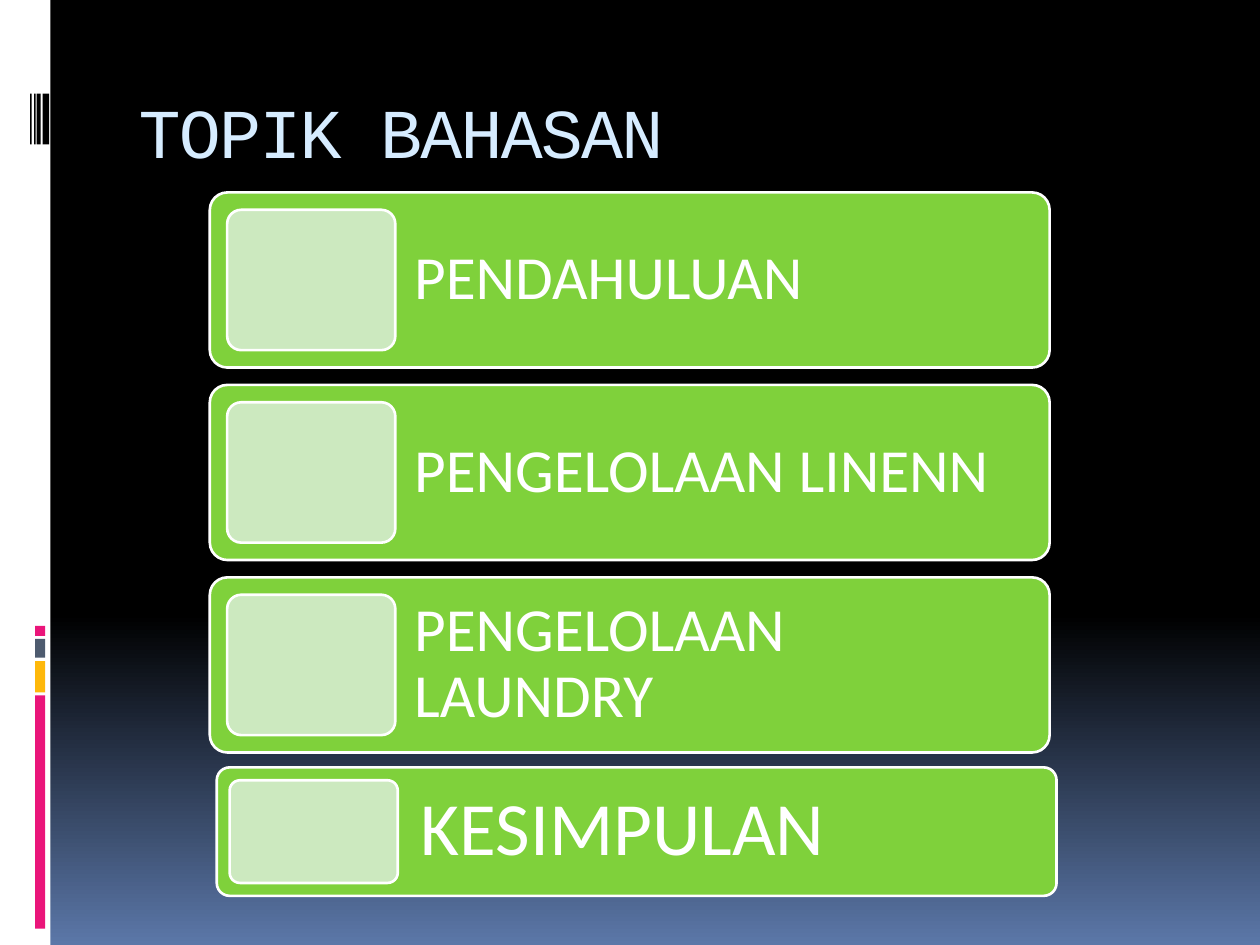
from pptx import Presentation
from pptx.dml.color import RGBColor
from pptx.enum.shapes import MSO_SHAPE
from pptx.enum.text import MSO_ANCHOR, PP_ALIGN
from pptx.util import Cm, Pt

BLACK = RGBColor(0x00, 0x00, 0x00)
WHITE = RGBColor(0xFF, 0xFF, 0xFF)
BLUE = RGBColor(0x5B, 0x77, 0xA8)
PALE = RGBColor(0xD6, 0xEC, 0xFF)
PINK = RGBColor(0xEA, 0x15, 0x7A)
GOLD = RGBColor(0xFE, 0xB8, 0x0A)
SLATE = RGBColor(0x4E, 0x5B, 0x6F)
GREEN = RGBColor(0x7F, 0xD1, 0x3B)
MINT = RGBColor(0xCC, 0xE9, 0xBF)

LEFT, WIDTH, THUMB = 4.23, 16.93, 3.39
TOP, STEP, HIGH = 3.88, 3.88, 3.53


class Deck:
    """Holds the style and the slide being drawn."""

    head, body = "Courier New", "Calibri"

    def __init__(self, slide):
        self.slide = slide

    def fade(self):
        """Fill the background with black turning to blue at the foot."""
        fill = self.slide.background.fill
        fill.gradient()
        fill.gradient_angle = 270
        for stop, (place, color) in zip(fill.gradient_stops,
                                        [(0.65, BLACK), (1, BLUE)]):
            stop.position = place
            stop.color.rgb = color

    def title(self, text):
        shape = self.slide.shapes.title
        shape.left, shape.top = Cm(2.54), Cm(1.42)
        shape.width, shape.height = Cm(21.59), Cm(2.54)
        frame = shape.text_frame
        frame.text = text
        frame.vertical_anchor = MSO_ANCHOR.MIDDLE
        frame.margin_bottom = Cm(0.25)
        para = frame.paragraphs[0]
        para.alignment = PP_ALIGN.LEFT
        self.font(para, self.head, 40, PALE)
        para.runs[0]._r.get_or_add_rPr().set("spc", "-100")

    def font(self, para, name, size, color):
        para.font.name = name
        para.font.size = Pt(size)
        para.font.color.rgb = color

    def bar(self, x, y, w, h, color):
        shape = self.slide.shapes.add_shape(
            MSO_SHAPE.RECTANGLE, Cm(x), Cm(y), Cm(w), Cm(h))
        shape.shadow.inherit = False
        shape.fill.solid()
        shape.fill.fore_color.rgb = color
        shape.line.fill.background()

    def tile(self, group, x, y, w, h, color):
        shape = group.shapes.add_shape(
            MSO_SHAPE.ROUNDED_RECTANGLE, Cm(x), Cm(y), Cm(w), Cm(h))
        shape.adjustments[0] = 0.1
        shape.shadow.inherit = False
        shape.fill.solid()
        shape.fill.fore_color.rgb = color
        shape.line.color.rgb = WHITE
        shape.line.width = Pt(1.5)

    def label(self, group, x, y, w, h, text, size, inset):
        box = group.shapes.add_textbox(Cm(x), Cm(y), Cm(w), Cm(h))
        frame = box.text_frame
        frame.word_wrap = True
        frame.vertical_anchor = MSO_ANCHOR.MIDDLE
        frame.margin_left = frame.margin_right = Cm(inset)
        frame.margin_top = frame.margin_bottom = Cm(inset)
        frame.text = text
        para = frame.paragraphs[0]
        para.line_spacing = 0.9
        self.font(para, self.body, size, WHITE)

    def topic(self, text, x, y, h, pad, size, inset):
        """Draw a wide panel with a small tile and a label beside it."""
        group = self.slide.shapes.add_group_shape()
        shift = pad + THUMB
        self.tile(group, x, y, WIDTH, h, GREEN)
        self.label(group, x + shift, y, WIDTH - shift, h, text, size, inset)
        self.tile(group, x + pad, y + pad, THUMB, h - 2 * pad, MINT)


def main():
    prs = Presentation()
    prs.slide_width, prs.slide_height = Cm(25.4), Cm(19.05)
    deck = Deck(prs.slides.add_slide(prs.slide_layouts[5]))
    deck.fade()

    deck.bar(0, 0, 1.02, 19.05, WHITE)
    for y, h, color in [(14.02, 4.7, PINK), (13.33, 0.63, GOLD),
                        (12.88, 0.38, SLATE), (12.62, 0.2, PINK)]:
        deck.bar(0.71, y, 0.2, h, color)
    for x, w in [(0.86, 0.13), (0.74, 0.08), (0.69, 0.03), (0.61, 0.03)]:
        deck.bar(x, 1.89, w, 1.02, BLACK)

    deck.title("TOPIK BAHASAN")
    topics = ["PENDAHULUAN", "PENGELOLAAN LINENN", "PENGELOLAAN LAUNDRY"]
    for i, text in enumerate(topics):
        deck.topic(text, LEFT, TOP + i * STEP, HIGH, 0.35, 35, 0.38)
    deck.topic("KESIMPULAN", 4.37, 15.47, 2.59, 0.26, 43, 0.46)

    prs.save("out.pptx")


if __name__ == "__main__":
    main()
